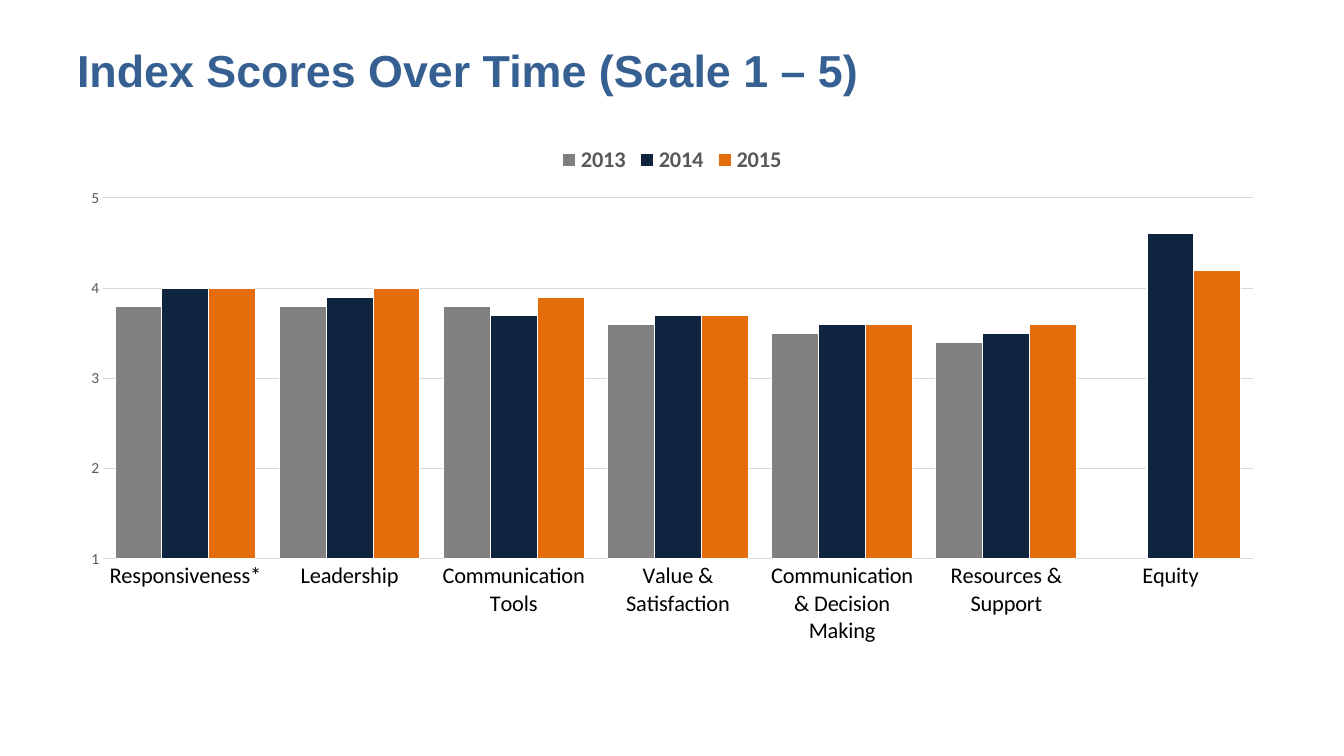
"""Build a slide that compares survey index scores across three years."""
from pptx import Presentation
from pptx.chart.data import CategoryChartData
from pptx.dml.color import RGBColor
from pptx.enum import chart as ch, text as tx
from pptx.util import Pt

BLUE = RGBColor(0x37, 0x60, 0x92)
BLACK = RGBColor(0, 0, 0)
WHITE = RGBColor(0xFF, 0xFF, 0xFF)
DARK_GRAY = RGBColor(0x59, 0x59, 0x59)
LIGHT_GRAY = RGBColor(0xD9, 0xD9, 0xD9)
GRAY = RGBColor(0x80, 0x80, 0x80)
NAVY = RGBColor(0x0F, 0x24, 0x3E)
ORANGE = RGBColor(0xE4, 0x6C, 0x0A)

INDEXES = ["Responsiveness*", "Leadership", "Communication Tools",
           "Value & Satisfaction", "Communication & Decision Making",
           "Resources & Support", "Equity"]
YEARS = [("2013", GRAY, [3.8, 3.8, 3.8, 3.6, 3.5, 3.4, None]),
         ("2014", NAVY, [4, 3.9, 3.7, 3.7, 3.6, 3.5, 4.6]),
         ("2015", ORANGE, [4, 4, 3.9, 3.7, 3.6, 3.6, 4.2])]


class ScoreSlide:
    """Hold the slide and its style, and add each kind of element."""

    heading_font = "Arial"
    chart_font = "Calibri"
    left, width = Pt(48), Pt(864)

    def __init__(self, deck):
        self.slide = deck.slides.add_slide(deck.slide_layouts[6])

    def style_font(self, font, name, size, color, bold=False):
        font.name, font.size, font.bold = name, Pt(size), bold
        font.color.rgb = color

    def style_line(self, line, color):
        line.color.rgb = color
        line.width = Pt(0.75)

    def add_heading(self, wording, top, height):
        frame = self.slide.shapes.add_textbox(
            self.left, Pt(top), self.width, Pt(height)).text_frame
        frame.word_wrap = True
        frame.vertical_anchor = tx.MSO_ANCHOR.MIDDLE
        run = frame.paragraphs[0].add_run()
        run.text = wording
        self.style_font(run.font, self.heading_font, 32, BLUE, True)

    def add_scores(self, indexes, years, top, height):
        scores = CategoryChartData()
        scores.categories = indexes
        for year, _, values in years:
            scores.add_series(year, values)
        chart = self.slide.shapes.add_chart(
            ch.XL_CHART_TYPE.COLUMN_CLUSTERED, self.left, Pt(top),
            self.width, Pt(height), scores).chart
        chart.has_title = False
        self.style_font(chart.font, self.chart_font, 11, BLACK)
        self.style_columns(chart.plots[0], years)
        self.style_axes(chart.category_axis, chart.value_axis)
        chart.has_legend = True
        chart.legend.position = ch.XL_LEGEND_POSITION.TOP
        chart.legend.include_in_layout = False
        self.style_font(chart.legend.font, self.chart_font, 16, DARK_GRAY, True)

    def style_columns(self, columns, years):
        columns.gap_width = 50
        columns.overlap = 0
        columns.vary_by_categories = False
        for series, (_, color, _) in zip(columns.series, years):
            series.format.fill.solid()
            series.format.fill.fore_color.rgb = color
            self.style_line(series.format.line, WHITE)

    def style_axes(self, index_axis, score_axis):
        for axis, size, color in ((index_axis, 16, BLACK),
                                  (score_axis, 11, DARK_GRAY)):
            axis.major_tick_mark = ch.XL_TICK_MARK.NONE
            axis.minor_tick_mark = ch.XL_TICK_MARK.NONE
            self.style_font(axis.tick_labels.font, self.chart_font, size, color)
        self.style_line(index_axis.format.line, LIGHT_GRAY)
        score_axis.format.line.fill.background()
        score_axis.minimum_scale, score_axis.maximum_scale = 1, 5
        score_axis.major_unit = 1
        score_axis.has_major_gridlines = True
        self.style_line(score_axis.major_gridlines.format.line, LIGHT_GRAY)


def main():
    deck = Presentation()
    deck.slide_width, deck.slide_height = Pt(960), Pt(540)
    page = ScoreSlide(deck)
    page.add_heading("Index Scores Over Time (Scale 1 – 5)", 21.6, 56)
    page.add_scores(INDEXES, YEARS, 96, 372)
    deck.save("out.pptx")


if __name__ == "__main__":
    main()
